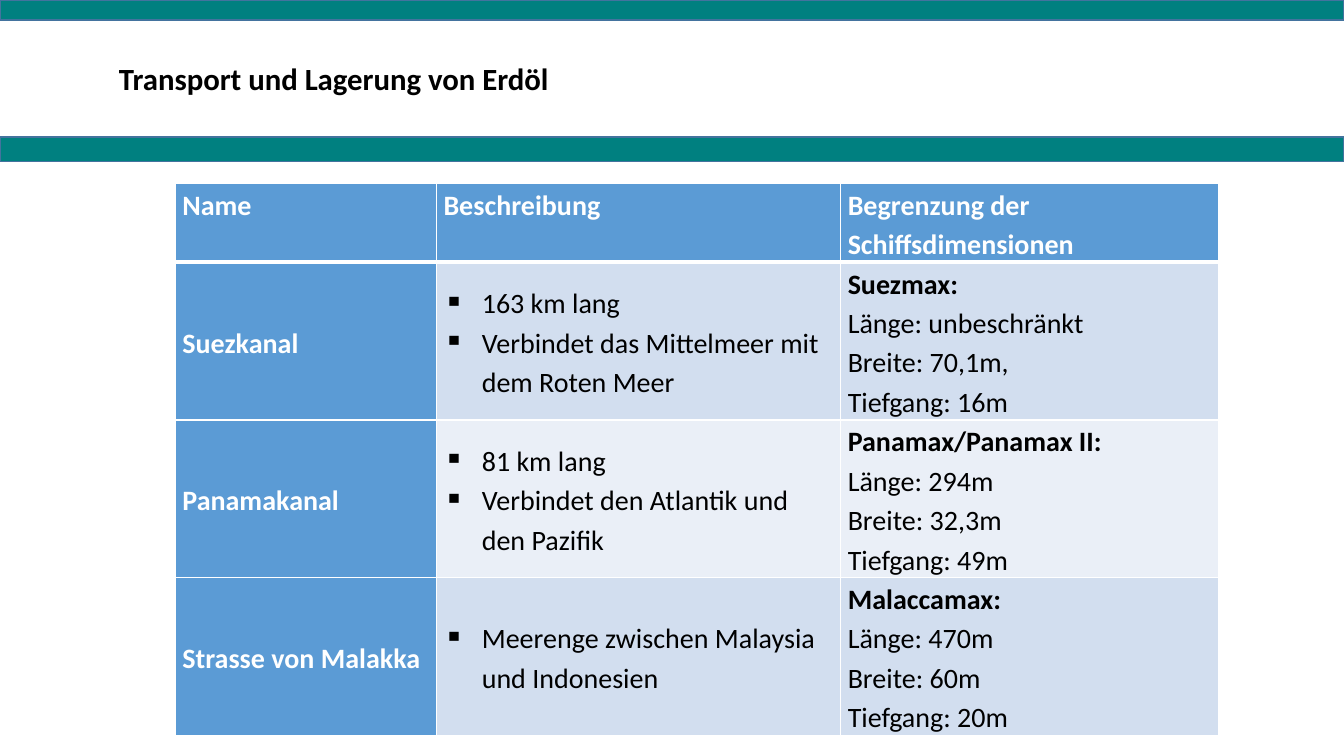
from dataclasses import dataclass

import lxml.etree
import pptx
import pptx.dml.color
import pptx.enum.shapes
import pptx.enum.text
import pptx.oxml.ns
import pptx.util

WIDTH, HEIGHT = 13.33, 7.5
FONT = "Calibri"
TEAL, BAR_EDGE = "008080", "43739E"
BLUE, BAND_DARK, BAND_LIGHT = "5B9BD5", "D2DEEF", "EAEFF7"
WHITE, BLACK = "FFFFFF", "000000"
# Shares of the slide in percent
BARS = [(0, 2.67), (18.13, 3.2)]
COLUMN_SHARES = [19.43, 30.08, 28.13]
HEADER_SHARE, ROW_SHARE = 9.87, 20
ALIGN = pptx.enum.text.PP_ALIGN
MIDDLE = pptx.enum.text.MSO_ANCHOR.MIDDLE
TOP = pptx.enum.text.MSO_ANCHOR.TOP


@dataclass
class Line:
    text: str
    color: str = BLACK
    bold: bool = False
    bullet: bool = False
    align: ALIGN = ALIGN.LEFT


@dataclass
class Waterway:
    name: str
    description: list[str]
    ship_class: str
    limits: list[str]


HEADERS = [
    Line("Name", WHITE, True, align=ALIGN.JUSTIFY),
    Line("Beschreibung", WHITE, True, align=ALIGN.JUSTIFY),
    Line("Begrenzung der Schiffsdimensionen", WHITE, True),
]
WATERWAYS = [
    Waterway("Suezkanal",
             ["163 km lang", "Verbindet das Mittelmeer mit dem Roten Meer"],
             "Suezmax:",
             ["Länge: unbeschränkt", "Breite: 70,1m,", "Tiefgang: 16m"]),
    Waterway("Panamakanal",
             ["81 km lang", "Verbindet den Atlantik und den Pazifik"],
             "Panamax/Panamax II:",
             ["Länge: 294m", "Breite: 32,3m", "Tiefgang: 49m"]),
    Waterway("Strasse von Malakka",
             ["Meerenge zwischen Malaysia und Indonesien"],
             "Malaccamax:",
             ["Länge: 470m", "Breite: 60m", "Tiefgang: 20m"]),
]


def across(percent: float) -> pptx.util.Length:
    return pptx.util.Inches(WIDTH * percent / 100)


def down(percent: float) -> pptx.util.Length:
    return pptx.util.Inches(HEIGHT * percent / 100)


def rgb(color: str) -> pptx.dml.color.RGBColor:
    return pptx.dml.color.RGBColor.from_string(color)


def style_font(para, size: float, color: str, bold: bool) -> None:
    para.font.name = FONT
    para.font.size = pptx.util.Pt(size)
    para.font.bold = bold
    para.font.color.rgb = rgb(color)


def add_bar(page, top: float, height: float) -> None:
    bar = page.shapes.add_shape(pptx.enum.shapes.MSO_SHAPE.RECTANGLE,
                                0, down(top), across(100), down(height))
    bar.shadow.inherit = False
    bar.fill.solid()
    bar.fill.fore_color.rgb = rgb(TEAL)
    bar.line.color.rgb = rgb(BAR_EDGE)
    bar.line.width = pptx.util.Pt(1)


def add_child(parent, tag: str, **attributes: str):
    return lxml.etree.SubElement(parent, pptx.oxml.ns.qn(tag), attributes)


def add_bullet(para) -> None:
    properties = para._p.get_or_add_pPr()
    indent = pptx.util.Inches(0.38)
    properties.set("marL", str(indent))
    properties.set("indent", str(-indent))
    add_child(properties, "a:buChar", char="▪")


def add_borders(cell, top: float, bottom: float) -> None:
    properties = cell._tc.get_or_add_tcPr()
    for side, points in (("L", 1), ("R", 1), ("T", top), ("B", bottom)):
        edge = add_child(properties, f"a:ln{side}", w=str(pptx.util.Pt(points)))
        add_child(add_child(edge, "a:solidFill"), "a:srgbClr", val=WHITE)


def fill_cell(cell, lines: list[Line], fill: str, anchor,
              top: float = 1, bottom: float = 1) -> None:
    add_borders(cell, top, bottom)
    cell.fill.solid()
    cell.fill.fore_color.rgb = rgb(fill)
    cell.margin_left = cell.margin_right = pptx.util.Inches(0.07)
    cell.margin_top = cell.margin_bottom = 0
    cell.vertical_anchor = anchor
    for index, line in enumerate(lines):
        frame = cell.text_frame
        para = frame.add_paragraph() if index else frame.paragraphs[0]
        para.text = line.text
        para.alignment = line.align
        para.line_spacing = 1.15
        if line.bullet:
            add_bullet(para)
        style_font(para, 20, line.color, line.bold)


def add_title(page, text: str) -> None:
    title = page.shapes.title
    title.left, title.top = across(8.1), down(5.73)
    title.width, title.height = across(77.5), down(9.73)
    title.text_frame.text = text
    title.text_frame.vertical_anchor = MIDDLE
    para = title.text_frame.paragraphs[0]
    para.alignment = ALIGN.LEFT
    para.line_spacing = 0.9
    style_font(para, 22, BLACK, True)


def add_waterway_table(page) -> None:
    row_shares = [HEADER_SHARE] + [ROW_SHARE] * len(WATERWAYS)
    table = page.shapes.add_table(
        len(row_shares), len(COLUMN_SHARES), across(13.05), down(24.27),
        across(sum(COLUMN_SHARES)), down(sum(row_shares))).table
    for column, share in zip(table.columns, COLUMN_SHARES):
        column.width = across(share)
    for row, share in zip(table.rows, row_shares):
        row.height = down(share)

    # Header row with a heavier lower edge
    for column, header in enumerate(HEADERS):
        fill_cell(table.cell(0, column), [header], BLUE, TOP, bottom=3)

    # One banded row per waterway
    for row, waterway in enumerate(WATERWAYS, start=1):
        band = BAND_DARK if row % 2 else BAND_LIGHT
        upper = 3 if row == 1 else 1
        name = [Line(waterway.name, WHITE, True)]
        description = [Line(text, bullet=True) for text in waterway.description]
        limits = [Line(waterway.ship_class, bold=True)]
        limits += [Line(text) for text in waterway.limits]
        fill_cell(table.cell(row, 0), name, BLUE, MIDDLE, upper)
        fill_cell(table.cell(row, 1), description, band, MIDDLE, upper)
        fill_cell(table.cell(row, 2), limits, band, TOP, upper)


def main() -> None:
    deck = pptx.Presentation()
    deck.slide_width, deck.slide_height = across(100), down(100)
    page = deck.slides.add_slide(deck.slide_layouts.get_by_name("Title Only"))
    for top, height in BARS:
        add_bar(page, top, height)
    add_title(page, "Transport und Lagerung von Erdöl")
    add_waterway_table(page)
    deck.save("out.pptx")


if __name__ == "__main__":
    main()
